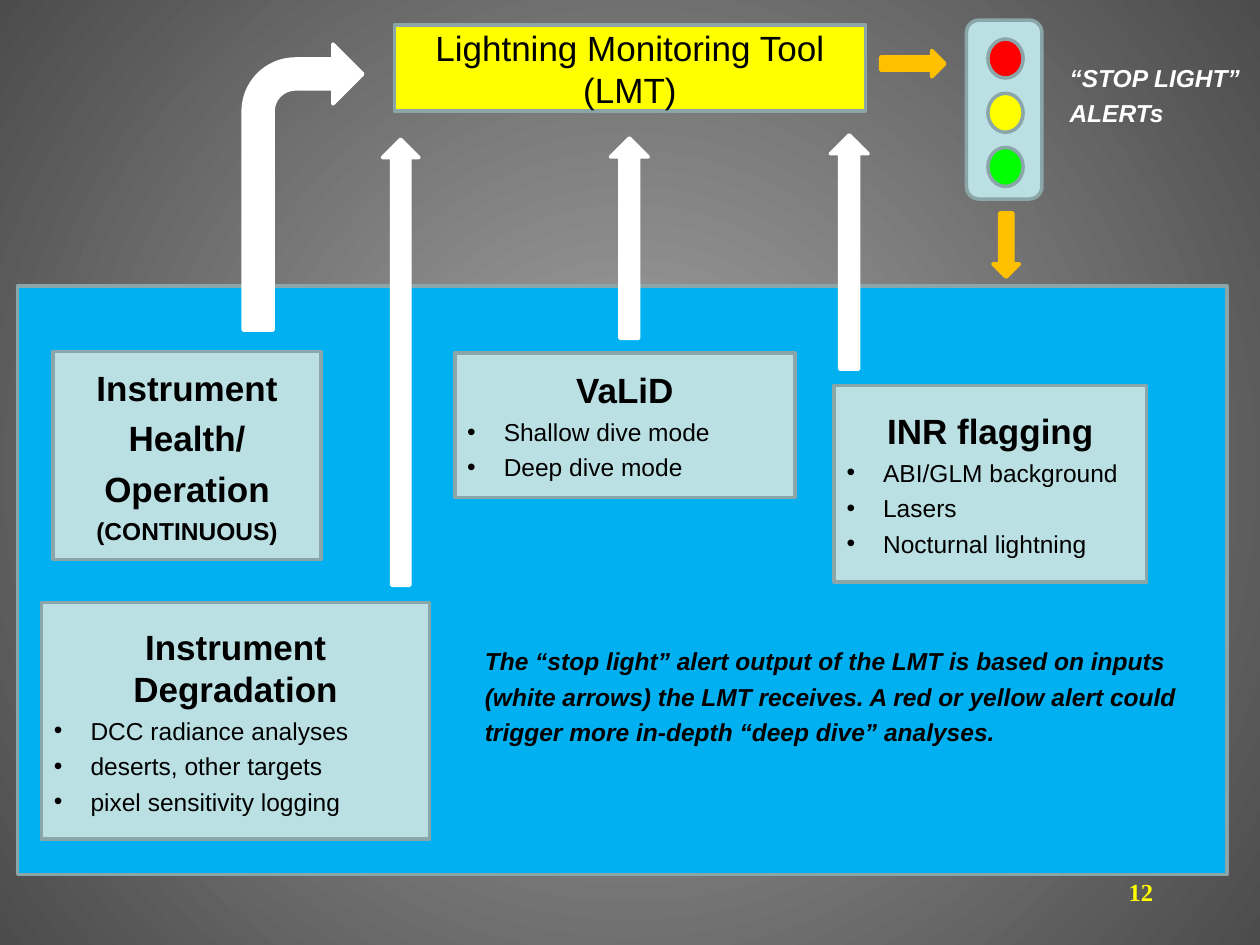
from lxml import etree
from pptx import Presentation
from pptx.dml.color import RGBColor
from pptx.enum import shapes, text
from pptx.oxml.ns import qn
from pptx.util import Inches, Pt

SHAPE = shapes.MSO_SHAPE
ALIGN = text.PP_ALIGN
GREY, PALE, WHITE, AMBER = "8AA6A8", "BBE0E3", "FFFFFF", "FFC000"
BLACK, YELLOW = "000000", "FFFF00"


def color(hex_string):
    return RGBColor.from_string(hex_string)


def paint_background(slide, center, edge):
    """Fill the slide with a circular gradient that starts in the middle."""
    fill = slide.background.fill
    fill.gradient()
    for stop, shade in zip(fill.gradient_stops, (center, edge)):
        stop.color.rgb = color(shade)
    gradient = slide.element.find(".//" + qn("a:gradFill"))
    circle = etree.Element(qn("a:path"), path="circle")
    etree.SubElement(circle, qn("a:fillToRect"), l="50000", t="50000", r="50000", b="50000")
    gradient.replace(gradient.find(qn("a:lin")), circle)


def add_block(slide, kind, box, fill, line=GREY, rotation=0):
    block = slide.shapes.add_shape(kind, *map(Inches, box))
    block.shadow.inherit = False
    block.fill.solid()
    block.fill.fore_color.rgb = color(fill)
    block.line.color.rgb = color(line)
    block.line.width = Pt(2)
    block.rotation = rotation
    return block


def add_arrow(slide, box, fill, rotation=0, kind=SHAPE.RIGHT_ARROW):
    return add_block(slide, kind, box, fill, fill, rotation)


def add_bullet(paragraph):
    properties = paragraph._p.get_or_add_pPr()
    indent = Inches(0.29)
    properties.set("marL", str(indent))
    properties.set("indent", str(-indent))
    etree.SubElement(properties, qn("a:buFont"), typeface="Arial")
    etree.SubElement(properties, qn("a:buChar"), char="•")


def write_line(frame, words, size, align=ALIGN.LEFT, bold=False, italic=False,
               shade=BLACK, font="Arial", bullet=False):
    """Write into the empty first paragraph, or add one below the others."""
    paragraph = frame.paragraphs[0]
    if paragraph.runs:
        paragraph = frame.add_paragraph()
        paragraph.space_before = Pt(size / 4)
    paragraph.add_run().text = words
    paragraph.alignment = align
    if bullet:
        add_bullet(paragraph)
    paragraph.font.size = Pt(size)
    paragraph.font.name = font
    paragraph.font.bold = bold
    paragraph.font.italic = italic
    paragraph.font.color.rgb = color(shade)


def add_input_box(slide, box, headings, bullets=()):
    """Add a pale box with (words, size) headings above plain bullets."""
    frame = add_block(slide, SHAPE.RECTANGLE, box, PALE).text_frame
    frame.vertical_anchor = text.MSO_ANCHOR.MIDDLE
    for words, size in headings:
        write_line(frame, words, size, ALIGN.CENTER, bold=True)
    for words in bullets:
        write_line(frame, words, 14, bullet=True)


def add_caption(slide, box, lines, shade, align=ALIGN.LEFT):
    frame = slide.shapes.add_textbox(*map(Inches, box)).text_frame
    frame.word_wrap = False
    for words in lines:
        write_line(frame, words, 14, align, bold=True, italic=True, shade=shade)


def add_slide_number(slide, number):
    frame = slide.shapes.add_textbox(*map(Inches, (7.17, 6.83, 2.08, 0.5))).text_frame
    frame.word_wrap = True
    frame.vertical_anchor = text.MSO_ANCHOR.MIDDLE
    write_line(frame, number, 14, ALIGN.RIGHT, bold=True, shade=YELLOW,
               font="Times New Roman")


def add_tool_title(slide):
    title = add_block(slide, SHAPE.RECTANGLE, (3.13, 0.2, 3.74, 0.68), YELLOW)
    title.text_frame.vertical_anchor = text.MSO_ANCHOR.MIDDLE
    write_line(title.text_frame, "Lightning Monitoring Tool (LMT)", 20, ALIGN.CENTER)


def add_stop_light(slide):
    add_block(slide, SHAPE.ROUNDED_RECTANGLE, (7.67, 0.16, 0.6, 1.42), PALE)
    for row, lamp in enumerate(("FF0000", YELLOW, "00FF00")):
        add_block(slide, SHAPE.OVAL, (7.84, 0.31 + 0.43 * row, 0.28, 0.31), lamp)
    add_caption(slide, (8.39, 0.45, 1.56, 0.62), ("“STOP LIGHT”", "ALERTs"), WHITE)


def main():
    deck = Presentation()
    deck.slide_width, deck.slide_height = Inches(10), Inches(7.5)
    slide = deck.slides.add_slide(deck.slide_layouts[6])
    paint_background(slide, "A4A4A4", "4C4C4C")

    add_block(slide, SHAPE.RECTANGLE, (0.14, 2.27, 9.6, 4.67), "00B0F0")
    add_slide_number(slide, "12")
    add_tool_title(slide)

    add_input_box(slide, (0.42, 2.79, 2.13, 1.65),
                  [("Instrument", 20), ("Health/", 20), ("Operation", 20), ("(CONTINUOUS)", 14)])
    add_input_box(slide, (3.61, 2.8, 2.7, 1.15), [("VaLiD", 20)],
                  ["Shallow dive mode", "Deep dive mode"])
    add_input_box(slide, (6.62, 3.06, 2.48, 1.56), [("INR flagging", 20)],
                  ["ABI/GLM background", "Lasers", "Nocturnal lightning"])
    add_input_box(slide, (0.33, 4.78, 3.08, 1.88), [("Instrument Degradation", 20)],
                  ["DCC radiance analyses", "deserts, other targets", "pixel sensitivity logging"])

    add_stop_light(slide)
    add_arrow(slide, (6.99, 0.4, 0.51, 0.21), AMBER)
    add_arrow(slide, (7.73, 1.84, 0.51, 0.21), AMBER, 90)

    add_arrow(slide, (1.93, 0.35, 0.95, 2.27), WHITE, kind=SHAPE.BENT_ARROW)
    for input_arrow in ((1.41, 2.73, 3.54, 0.29), (4.2, 1.74, 1.59, 0.3), (5.81, 1.85, 1.86, 0.3)):
        add_arrow(slide, input_arrow, WHITE, 270)

    add_caption(slide, (3.75, 5.08, 5.77, 0.9),
                ("The “stop light” alert output of the LMT is based on inputs",
                 "(white arrows) the LMT receives. A red or yellow alert could",
                 "trigger more in-depth “deep dive” analyses."),
                BLACK, ALIGN.JUSTIFY)
    deck.save("out.pptx")


if __name__ == "__main__":
    main()
